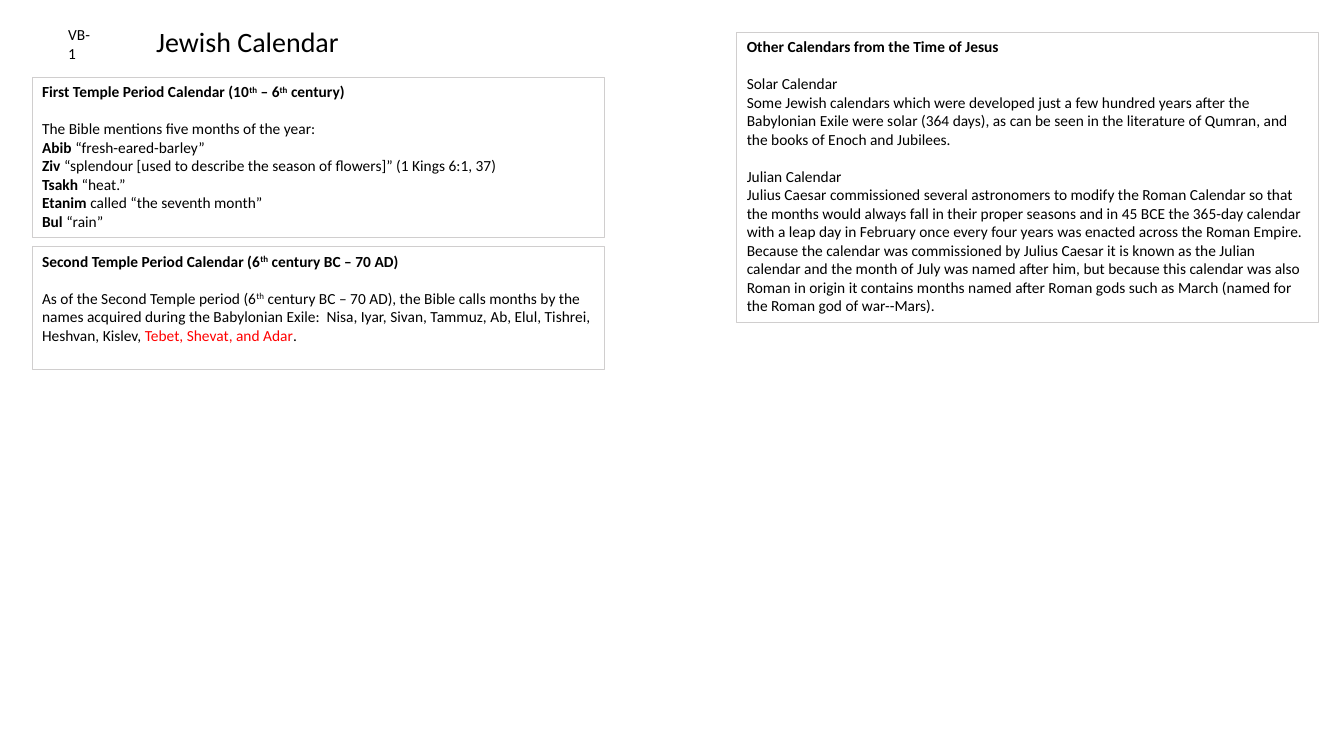
"""Build a slide that summarises the Jewish calendar and its neighbours."""
import pptx
import pptx.dml.color
import pptx.enum.shapes
import pptx.enum.text
import pptx.util

Cm = pptx.util.Cm
Pt = pptx.util.Pt

COLOURS = {"text": "000000", "accent": "FF0000", "border": "D0CECE"}
FONT = {"name": "Calibri", "size": Pt(11), "bold": False}
STYLES = {
    "plain": {},
    "bold": {"bold": True},
    "raised": {},
    "bold raised": {"bold": True},
    "accent": {},
    "title": {"size": Pt(20)},
}
FRAME = {
    "word_wrap": True,
    "auto_size": pptx.enum.text.MSO_AUTO_SIZE.NONE,
    "vertical_anchor": pptx.enum.text.MSO_ANCHOR.TOP,
}
GAP = {"space_before": Pt(13.4)}

FIRST_TEMPLE = [
    ([("First Temple Period Calendar (10", "bold"), ("th", "bold raised"), (" – 6", "bold"),
      ("th", "bold raised"), (" century)", "bold")], {}),
    ([("The Bible mentions five months of the year:", "plain")], GAP),
] + [
    ([(month + " ", "bold"), (meaning, "plain")], {})
    for month, meaning in [
        ("Abib", "“fresh-eared-barley”"),
        ("Ziv", "“splendour [used to describe the season of flowers]” (1 Kings 6:1, 37)"),
        ("Tsakh", "“heat.”"),
        ("Etanim", "called “the seventh month”"),
        ("Bul", "“rain”"),
    ]
]
SECOND_TEMPLE = [
    ([("Second Temple Period Calendar (6", "bold"), ("th", "bold raised"),
      (" century BC – 70 AD)", "bold")], {}),
    ([("As of the Second Temple period (6", "plain"), ("th", "raised"),
      (" century BC – 70 AD), the Bible calls months by the names acquired during the "
       "Babylonian Exile:  Nisa, Iyar, Sivan, Tammuz, Ab, Elul, Tishrei, Heshvan, Kislev, ",
       "plain"),
      ("Tebet, Shevat, and Adar", "accent"), (".", "plain")], GAP),
]
OTHER_CALENDARS = [
    ([("Other Calendars from the Time of Jesus", "bold")], {}),
    ([("Solar Calendar", "plain")], GAP),
    ([("Some Jewish calendars which were developed just a few hundred years after the "
       "Babylonian Exile were solar (364 days), as can be seen in the literature of Qumran, "
       "and the books of Enoch and Jubilees.", "plain")], {}),
    ([("Julian Calendar", "plain")], GAP),
    ([("Julius Caesar commissioned several astronomers to modify the Roman Calendar so that "
       "the months would always fall in their proper seasons and in 45 BCE the 365-day "
       "calendar with a leap day in February once every four years was enacted across the "
       "Roman Empire. Because the calendar was commissioned by Julius Caesar it is known as "
       "the Julian calendar and the month of July was named after him, but because this "
       "calendar was also Roman in origin it contains months named after Roman gods such as "
       "March (named for the Roman god of war--Mars).", "plain")], {}),
]


def colour(name):
    """Return the named colour."""
    return pptx.dml.color.RGBColor.from_string(COLOURS[name])


def apply(target, values):
    """Set every attribute in values on target."""
    for name, value in values.items():
        setattr(target, name, value)


def add_span(para, words, style):
    """Append a styled run to a paragraph."""
    span = para.add_run()
    span.text = words
    apply(span.font, FONT | STYLES[style])
    span.font.color.rgb = colour("accent" if style == "accent" else "text")
    if "raised" in style:
        span.font._element.set("baseline", "30000")


def write(box, paragraphs):
    """Fill a box with left-aligned paragraphs of styled runs."""
    frame = box.text_frame
    apply(frame, FRAME)
    for index, (spans, spacing) in enumerate(paragraphs):
        para = frame.add_paragraph() if index else frame.paragraphs[0]
        apply(para, {"alignment": pptx.enum.text.PP_ALIGN.LEFT} | spacing)
        for words, style in spans:
            add_span(para, words, style)


def add_title(page, words, left, top, width, height):
    """Move the title placeholder and write the title."""
    box = page.shapes.title
    apply(box, {"left": Cm(left), "top": Cm(top), "width": Cm(width), "height": Cm(height)})
    write(box, [([(words, "title")], {})])


def add_label(page, words, *place):
    """Add a small plain text label."""
    box = page.shapes.add_textbox(*map(Cm, place))
    write(box, [([(words, "plain")], {})])


def add_panel(page, paragraphs, *place):
    """Add a thinly bordered panel of text."""
    box = page.shapes.add_shape(pptx.enum.shapes.MSO_SHAPE.RECTANGLE, *map(Cm, place))
    box.shadow.inherit = False
    box.fill.background()
    box.line.color.rgb = colour("border")
    box.line.width = Pt(0.75)
    write(box, paragraphs)


def main():
    """Build and save the deck."""
    deck = pptx.Presentation()
    apply(deck, {"slide_width": Cm(33.87), "slide_height": Cm(19.05)})
    page = deck.slides.add_slide(deck.slide_layouts[5])
    add_label(page, "VB-1", 1.47, 0.51, 1.19, 0.74)
    add_title(page, "Jewish Calendar", 3.68, 0.48, 5.38, 1.96)
    add_panel(page, FIRST_TEMPLE, 0.81, 1.95, 14.43, 4.03)
    add_panel(page, OTHER_CALENDARS, 18.57, 0.81, 14.66, 7.32)
    add_panel(page, SECOND_TEMPLE, 0.81, 6.22, 14.43, 3.09)
    deck.save("out.pptx")


if __name__ == "__main__":
    main()
